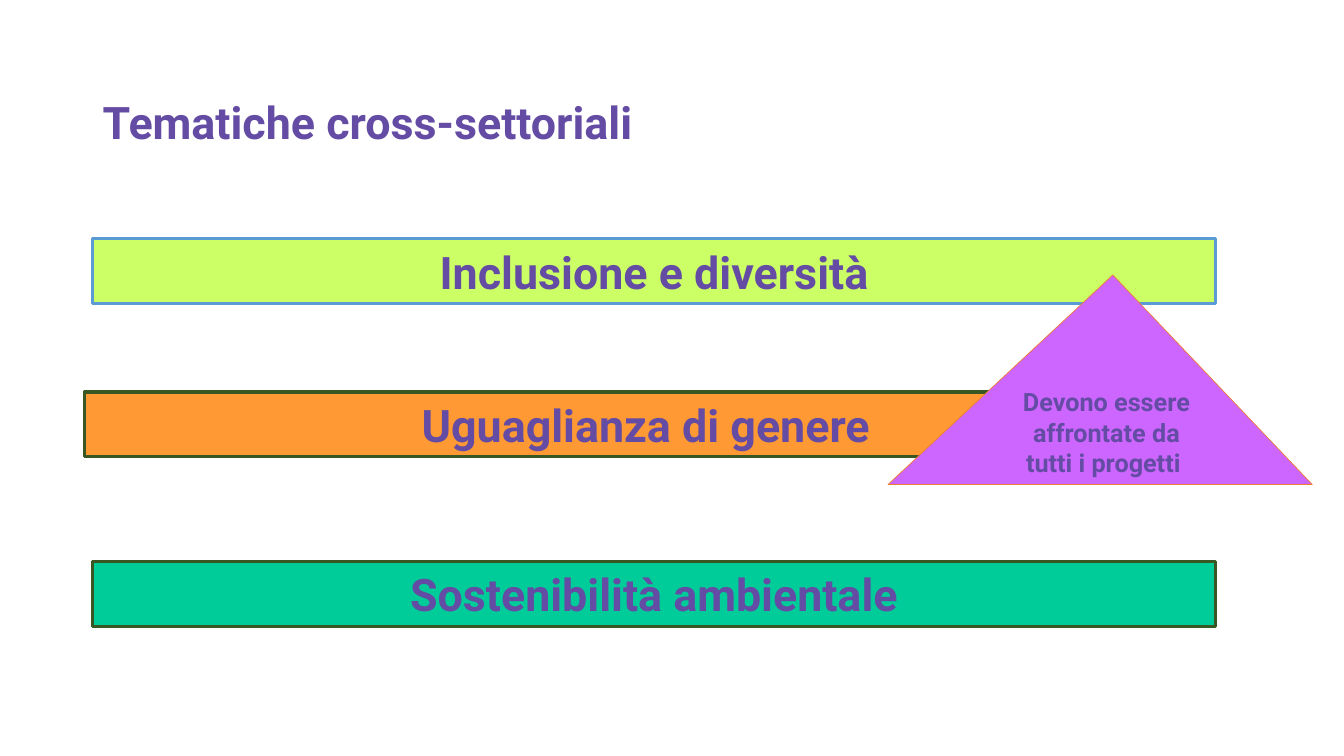
"""Build a slide on cross-cutting themes: three bars and a triangle."""
from pptx import Presentation
from pptx.dml.color import RGBColor
from pptx.enum import shapes, text
from pptx.util import Cm, Pt

HUES = {
    "ink": "644BA4", "lime": "CCFF66", "orange": "FF9933", "green": "00CC99",
    "violet": "CC66FF", "blue": "5B9BD5", "forest": "385723", "rust": "ED7D31",
}
KIND = shapes.MSO_SHAPE
ALIGN = text.PP_ALIGN
ANCHOR = text.MSO_ANCHOR


def hue(name):
    return RGBColor.from_string(HUES[name])


def write(shape, words, size=32, align=ALIGN.CENTER, anchor=ANCHOR.MIDDLE, space=1.0):
    frame = shape.text_frame
    frame.word_wrap = True
    frame.vertical_anchor = anchor
    para = frame.paragraphs[0]
    para.alignment = align
    para.line_spacing = space
    run = para.add_run()
    run.text = words
    run.font.name = "Roboto"
    run.font.size = Pt(size)
    run.font.bold = True
    run.font.color.rgb = hue("ink")


def block(slide, kind, box, fill, edge, weight):
    shape = slide.shapes.add_shape(kind, *map(Cm, box))
    shape.shadow.inherit = False
    shape.fill.solid()
    shape.fill.fore_color.rgb = hue(fill)
    shape.line.color.rgb = hue(edge)
    shape.line.width = Pt(weight)
    return shape


def bar(slide, left, top, words, fill, edge):
    shape = block(slide, KIND.RECTANGLE, (left, top, 28.3, 1.63), fill, edge, 2.25)
    write(shape, words)


def title(slide, words):
    box = slide.shapes.add_textbox(Cm(2.34), Cm(2.24), Cm(30.38), Cm(1.65))
    write(box, words, align=ALIGN.LEFT, anchor=ANCHOR.BOTTOM, space=0.9)


def peak(slide, words):
    box = (22.38, 6.93, 10.69, 5.28)
    shape = block(slide, KIND.ISOSCELES_TRIANGLE, box, "violet", "rust", 0.5)
    shape.adjustments[0] = 0.53
    write(shape, words, size=18)


def main():
    deck = Presentation()
    deck.slide_width, deck.slide_height = Cm(33.87), Cm(19.05)
    slide = deck.slides.add_slide(deck.slide_layouts[6])
    title(slide, "Tematiche cross-settoriali")
    bar(slide, 2.34, 6.02, "Inclusione e diversità", "lime", "blue")
    bar(slide, 2.13, 9.88, "Uguaglianza di genere", "orange", "forest")
    bar(slide, 2.34, 14.15, "Sostenibilità ambientale", "green", "forest")
    peak(slide, "Devono essere affrontate da tutti i progetti ")
    deck.save("out.pptx")


if __name__ == "__main__":
    main()
